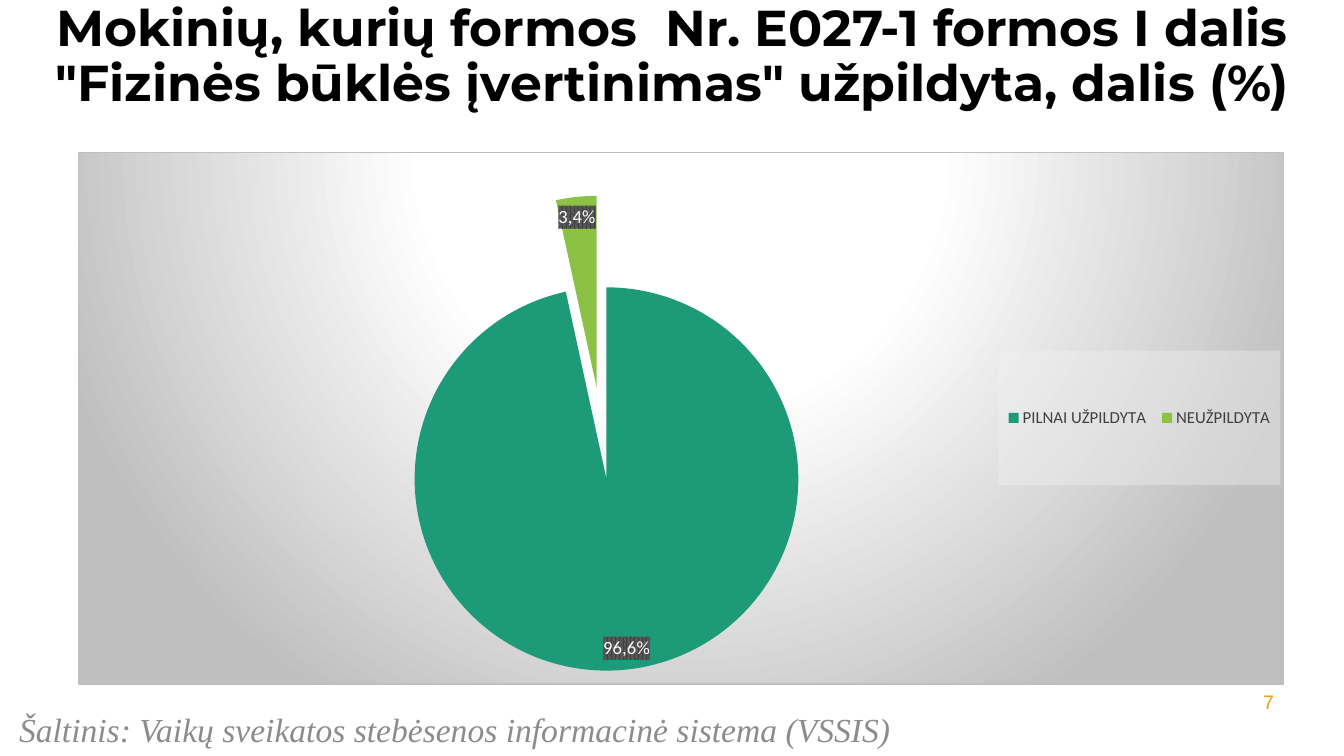
import pptx
import pptx.chart.data
import pptx.dml.color
import pptx.enum.chart
import pptx.enum.text
import pptx.oxml
import pptx.util
from pptx.util import Cm, Pt

RGB = pptx.dml.color.RGBColor
BLACK = RGB(0x00, 0x00, 0x00)
WHITE = RGB(0xFF, 0xFF, 0xFF)
SOURCE_GREY = RGB(0x8C, 0x8C, 0x8C)
DARK_GREY = RGB(0x40, 0x40, 0x40)
LABEL_GREY = RGB(0x59, 0x59, 0x59)
LEGEND_FILL = RGB(0xF2, 0xF2, 0xF2)
BORDER_GREY = RGB(0xBF, 0xBF, 0xBF)
ORANGE = RGB(0xF1, 0x9D, 0x19)
TEAL = RGB(0x1D, 0x9A, 0x78)
GREEN = RGB(0x8B, 0xC1, 0x45)

NAMESPACES = (
    'xmlns:a="http://schemas.openxmlformats.org/drawingml/2006/main" '
    'xmlns:c="http://schemas.openxmlformats.org/drawingml/2006/chart"'
)

# category, share, label, slice colour
SHARES = [
    ("PILNAI UŽPILDYTA", 0.966, "96,6%", TEAL),
    ("NEUŽPILDYTA", 0.034, "3,4%", GREEN),
]
EMPTY_SHARES = 2  # values left open after the named categories


def chart_xml(markup):
    """Parse a chart element, adding the namespaces to its tag."""
    return pptx.oxml.parse_xml(markup.replace(">", f" {NAMESPACES}>", 1))


def shape_properties(fill):
    return chart_xml(f"<c:spPr>{fill}<a:ln><a:noFill/></a:ln></c:spPr>")


def explosion():
    return chart_xml('<c:explosion val="24"></c:explosion>')


def manual_layout(frame, left, top, width, height, inner=False):
    """Layout from lengths in the chart frame, given as shares of its size."""
    target = '<c:layoutTarget val="inner"/>' if inner else ""
    return chart_xml(
        f"<c:layout><c:manualLayout>{target}"
        '<c:xMode val="edge"/><c:yMode val="edge"/>'
        f'<c:x val="{left / frame.width}"/><c:y val="{top / frame.height}"/>'
        f'<c:w val="{width / frame.width}"/><c:h val="{height / frame.height}"/>'
        "</c:manualLayout></c:layout>"
    )


def format_font(font, name, size, color, bold=False, italic=False):
    font.name, font.size = name, Pt(size)
    font.bold, font.italic = bold, italic
    font.color.rgb = color


def add_heading(slide, left, top, width, height):
    heading = slide.shapes.title
    heading.left, heading.top, heading.width, heading.height = left, top, width, height
    frame = heading.text_frame
    frame.auto_size = pptx.enum.text.MSO_AUTO_SIZE.NONE
    frame.vertical_anchor = pptx.enum.text.MSO_ANCHOR.TOP
    frame.margin_top = Cm(0.08)
    frame.text = (
        "Mokinių, kurių formos  Nr. E027-1 formos I dalis "
        '"Fizinės būklės įvertinimas" užpildyta, dalis (%)'
    )
    paragraph = frame.paragraphs[0]
    paragraph.alignment = pptx.enum.text.PP_ALIGN.CENTER
    paragraph.line_spacing = 0.9
    format_font(paragraph.runs[0].font, "Montserrat", 36, BLACK, bold=True)


def add_note(slide, box, text, alignment, **font):
    frame = slide.shapes.add_textbox(*box).text_frame
    frame.word_wrap = True
    frame.text = text
    frame.paragraphs[0].alignment = alignment
    format_font(frame.paragraphs[0].runs[0].font, **font)


def format_background(chart):
    """Round grey gradient behind the chart, with a thin border."""
    stops = "".join(
        f'<a:gs pos="{position * 1000}"><a:srgbClr val="{color}"/></a:gs>'
        for position, color in [(0, WHITE), (39, WHITE), (100, BORDER_GREY)]
    )
    background = chart_xml(
        f"<c:spPr><a:gradFill><a:gsLst>{stops}</a:gsLst>"
        '<a:path path="circle"><a:fillToRect l="50000" t="-80000" r="50000" b="180000"/></a:path>'
        f'</a:gradFill><a:ln w="{Pt(0.75)}"><a:solidFill><a:srgbClr val="{BORDER_GREY}"/>'
        "</a:solidFill></a:ln></c:spPr>"
    )
    chart.element.find("{*}chart").addnext(background)


def format_legend(chart, frame):
    chart.has_legend = True
    legend = chart.legend
    legend.position = pptx.enum.chart.XL_LEGEND_POSITION.RIGHT
    legend.include_in_layout = False
    format_font(legend.font, "Calibri", 12, DARK_GREY)
    element = legend._element
    for layout in element.findall("{*}layout"):
        element.remove(layout)
    position = element.find("{*}legendPos")
    position.addnext(manual_layout(frame, Cm(23.21), Cm(4.99), Cm(7.11), Cm(3.4)))
    # Only the named categories have an entry
    for index in reversed(range(len(SHARES), len(SHARES) + EMPTY_SHARES)):
        position.addnext(chart_xml(
            f'<c:legendEntry><c:idx val="{index}"/><c:delete val="1"/></c:legendEntry>'
        ))
    element.find("{*}overlay").addnext(shape_properties(
        f'<a:solidFill><a:srgbClr val="{LEGEND_FILL}"><a:alpha val="39000"/>'
        "</a:srgbClr></a:solidFill>"
    ))


def format_slices(series):
    best_fit = pptx.enum.chart.XL_LABEL_POSITION.BEST_FIT
    labels = series.data_labels
    labels.show_value = True
    labels.number_format, labels.number_format_is_linked = "0.00%", False
    labels.position = best_fit
    format_font(labels.font, "Calibri", 13.3, WHITE, bold=True)

    series._element.find("{*}tx").addnext(explosion())
    for index, (_, _, label_text, color) in enumerate(SHARES):
        point = series.points[index]
        point.format.fill.solid()
        point.format.fill.fore_color.rgb = color
        series._element.findall("{*}dPt")[index].find("{*}spPr").addprevious(explosion())

        label = point.data_label
        label.text_frame.text = label_text
        format_font(label.text_frame.paragraphs[0].runs[0].font, "Calibri", 13.3, WHITE)
        label.position = best_fit
        label_element = series._element.find("{*}dLbls").findall("{*}dLbl")[index]
        label_element.find("{*}tx").addnext(shape_properties(
            f'<a:pattFill prst="pct75"><a:fgClr><a:srgbClr val="{DARK_GREY}"/></a:fgClr>'
            f'<a:bgClr><a:srgbClr val="{LABEL_GREY}"/></a:bgClr></a:pattFill>'
        ))


def add_share_pie(slide, left, top, width, height):
    shares = pptx.chart.data.CategoryChartData(number_format="0.0%")
    shares.categories = [share[0] for share in SHARES]
    shares.add_series("Series 1", [share[1] for share in SHARES] + [None] * EMPTY_SHARES)
    frame = slide.shapes.add_chart(
        pptx.enum.chart.XL_CHART_TYPE.PIE, left, top, width, height, shares
    )
    chart = frame.chart
    chart.has_title = False
    format_font(chart.font, "Calibri", 10, BLACK)
    format_background(chart)
    format_legend(chart, frame)
    format_slices(chart.plots[0].series[0])

    # Place of the pie within the chart
    plot_area = chart.element.find("{*}chart").find("{*}plotArea")
    for layout in plot_area.findall("{*}layout"):
        plot_area.remove(layout)
    pie_size = Cm(12)
    plot_area.insert(0, manual_layout(frame, Cm(7.2), Cm(1.08), pie_size, pie_size, inner=True))


def main():
    presentation = pptx.Presentation()
    presentation.slide_width, presentation.slide_height = Cm(33.87), Cm(19.05)
    slide = presentation.slides.add_slide(presentation.slide_layouts[5])
    align = pptx.enum.text.PP_ALIGN

    add_heading(slide, 0, 0, presentation.slide_width, Cm(4.22))

    # Source line
    add_note(
        slide, (Cm(0.23), Cm(17.73), Cm(23.95), Cm(0.97)),
        "Šaltinis: Vaikų sveikatos stebėsenos informacinė sistema (VSSIS)",
        align.LEFT, name="Times New Roman", size=24, color=SOURCE_GREY, italic=True,
    )
    # Slide number
    add_note(
        slide, (Cm(31.04), Cm(17.25), Cm(1.32), Cm(1.02)), "7",
        align.RIGHT, name="Arial", size=14, color=ORANGE,
    )
    add_share_pie(slide, Cm(1.96), Cm(3.84), Cm(30.4), Cm(13.41))
    presentation.save("out.pptx")


if __name__ == "__main__":
    main()
